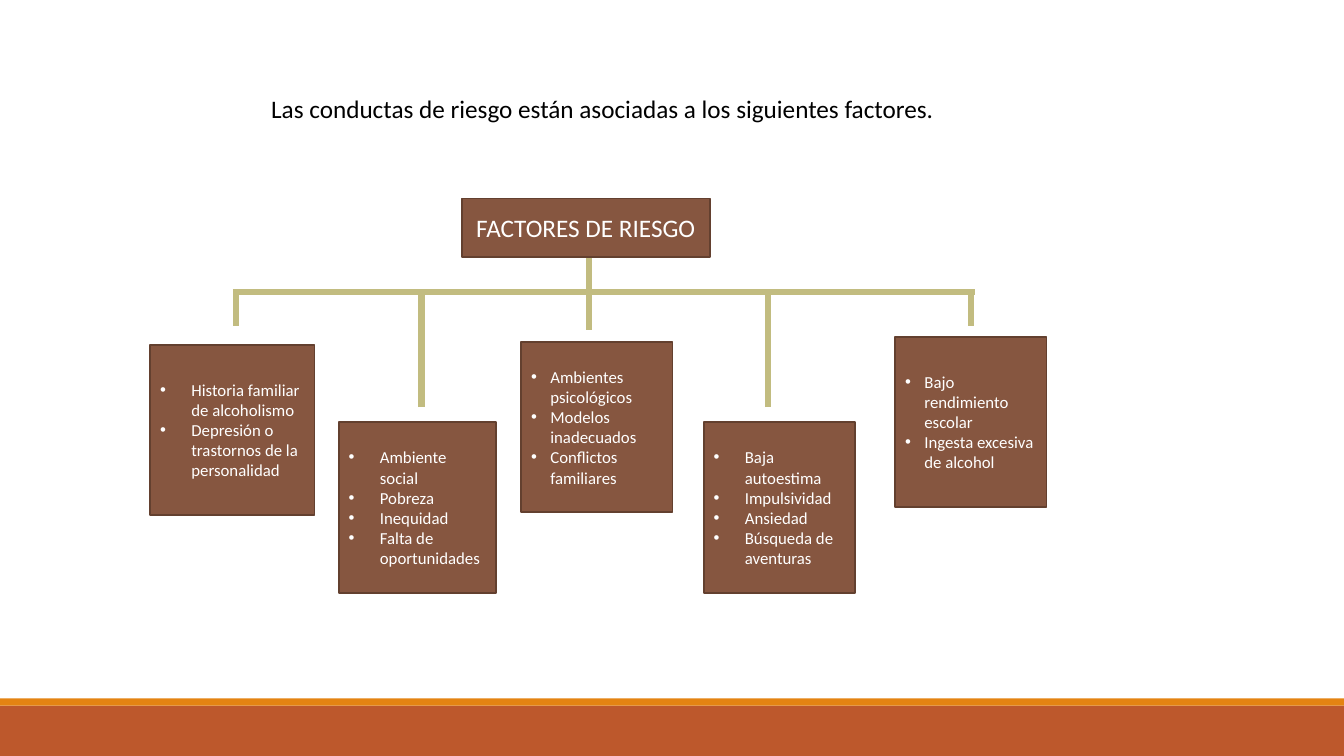
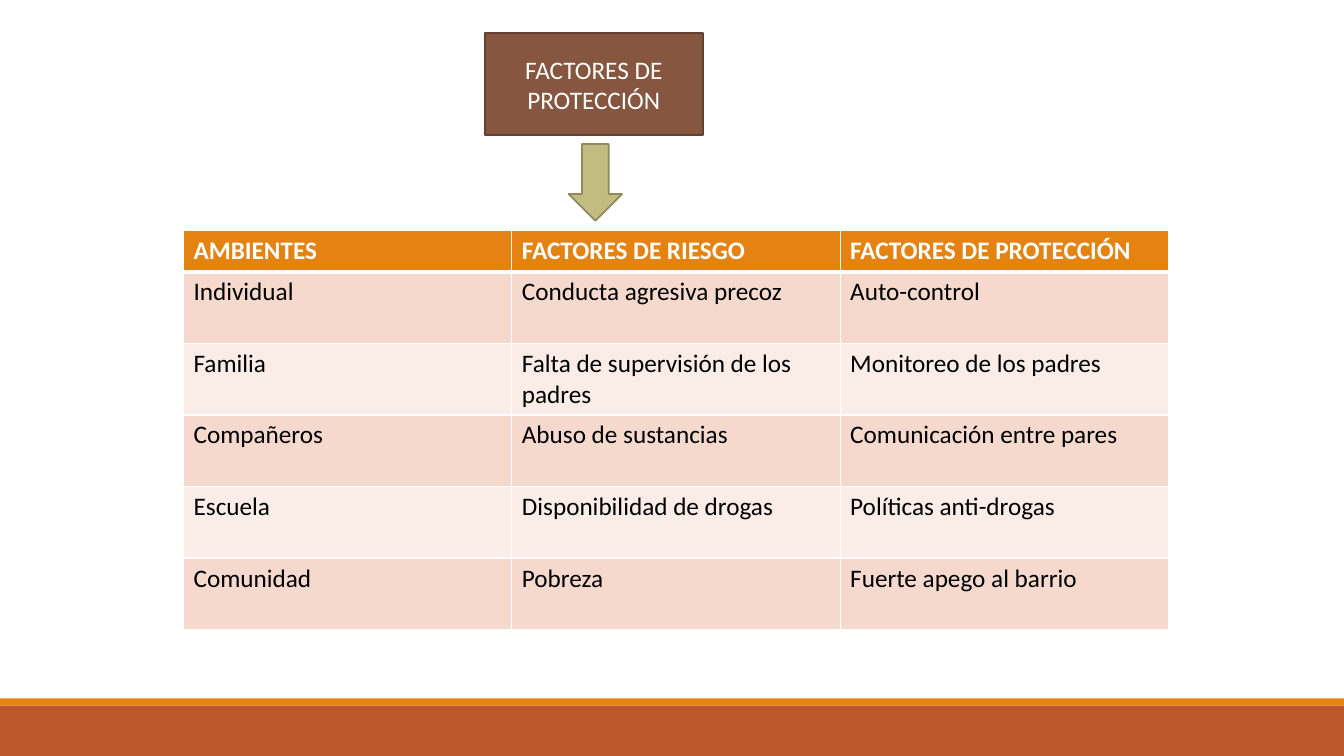
from collections import namedtuple
from dataclasses import dataclass

from lxml import etree
from pptx import Presentation, util as u
from pptx.dml.color import RGBColor
from pptx.enum import shapes, text
from pptx.oxml import ns

PX = 9144
Box = namedtuple("Box", "x y w h")


@dataclass(frozen=True)
class Theme:
    """Colours, type and line widths of the deck."""
    font: str = "Calibri"
    body: int = 18
    small: int = 12
    edge: float = 1.25
    bar: float = 4.5
    black: str = "000000"
    white: str = "FFFFFF"
    rust: str = "BD582C"
    amber: str = "E48312"
    brown: str = "865640"
    dark: str = "63402F"
    olive: str = "C2BC80"
    moss: str = "908B5F"
    rose: str = "F5D9CC"
    pale: str = "FAEDE7"


T = Theme()
PAGE = Box(0, 0, 1333, 750)
CARD_H = 169
CARDS = [
    (0, 145, 163, 31, ["Historia familiar de alcoholismo",
                       "Depresión o trastornos de la personalidad"]),
    (187, 222, 156, 31, ["Ambiente social", "Pobreza", "Inequidad",
                         "Falta de oportunidades"]),
    (368, 142, 150, 19, ["Ambientes psicológicos", "Modelos inadecuados",
                         "Conflictos familiares"]),
    (549, 222, 150, 31, ["Baja autoestima", "Impulsividad", "Ansiedad",
                         "Búsqueda de aventuras"]),
    (739, 137, 150, 19, ["Bajo rendimiento escolar",
                         "Ingesta excesiva de alcohol"]),
]
DROPS = [(85, 126), (269, 207), (435, 130), (613, 207), (814, 126)]
ROWS = [
    ("AMBIENTES", "FACTORES DE RIESGO", "FACTORES DE PROTECCIÓN"),
    ("Individual", "Conducta agresiva precoz", "Auto-control"),
    ("Familia", "Falta de supervisión de los padres", "Monitoreo de los padres"),
    ("Compañeros", "Abuso de sustancias", "Comunicación entre pares"),
    ("Escuela", "Disponibilidad de drogas", "Políticas anti-drogas"),
    ("Comunidad", "Pobreza", "Fuerte apego al barrio"),
]


def rgb(hue):
    """Turn a hex string into a colour."""
    return RGBColor.from_string(hue)


def emu(box):
    """Scale a box from px to EMU."""
    return [n * PX for n in box]


def within(box, x, y, w, h):
    """Place a box relative to the corner of another."""
    return Box(box.x + x, box.y + y, w, h)


def style(para, size, hue, bold=False):
    """Set the font of a paragraph."""
    font = para.font
    font.name, font.size, font.bold = T.font, u.Pt(size), bold
    font.color.rgb = rgb(hue)


def shape(slide, box, fill, line=None, kind=shapes.MSO_SHAPE.RECTANGLE):
    """Draw a flat preset shape."""
    item = slide.shapes.add_shape(kind, *emu(box))
    item.shadow.inherit = False
    item.fill.solid()
    item.fill.fore_color.rgb = rgb(fill)
    if line:
        item.line.color.rgb = rgb(line)
        item.line.width = u.Pt(T.edge)
    else:
        item.line.fill.background()
    return item


def bullet(para, indent):
    """Give a paragraph a hanging bullet."""
    props = para._p.get_or_add_pPr()
    props.set("marL", str(indent * PX))
    props.set("indent", str(-indent * PX))
    etree.SubElement(props, ns.qn("a:buFont"), typeface="Arial")
    etree.SubElement(props, ns.qn("a:buChar"), char="•")


def card(slide, box, lines, size, indent=0):
    """Draw a brown box with centred or bulleted text."""
    frame = shape(slide, box, T.brown, T.dark).text_frame
    frame.word_wrap = True
    frame.vertical_anchor = text.MSO_ANCHOR.MIDDLE
    frame.text = "\n".join(lines)
    for para in frame.paragraphs:
        style(para, size, T.white)
        para.alignment = text.PP_ALIGN.LEFT if indent else text.PP_ALIGN.CENTER
        if indent:
            bullet(para, indent)


def bar(slide, box, x1, y1, x2, y2):
    """Draw one thick line of the tree."""
    ends = box.x + x1, box.y + y1, box.x + x2, box.y + y2
    line = slide.shapes.add_connector(shapes.MSO_CONNECTOR.STRAIGHT, *emu(ends))
    line.line.color.rgb = rgb(T.olive)
    line.line.width = u.Pt(T.bar)
    etree.SubElement(line._element.spPr, ns.qn("a:effectLst"))


def base(deck):
    """Add a blank slide with the footer bands."""
    slide = deck.slides.add_slide(deck.slide_layouts[6])
    shape(slide, within(PAGE, 0, 700, PAGE.w, 50), T.rust)
    shape(slide, within(PAGE, 0, 693, PAGE.w, 7), T.amber)
    return slide


def intro(slide, box, words):
    """Write the centred opening line."""
    frame = slide.shapes.add_textbox(*emu(box)).text_frame
    frame.word_wrap = True
    frame.text = words
    para = frame.paragraphs[0]
    para.alignment = text.PP_ALIGN.CENTER
    style(para, T.body, T.black)


def tree(slide, box):
    """Draw the root, its branches and the cards."""
    bus, stem = 93, 435
    card(slide, within(box, 309, 0, 246, 58), ["FACTORES DE RIESGO"], T.body)
    bar(slide, box, 82, bus, 818, bus)
    bar(slide, box, stem, bus, stem, 59)
    for x, end in DROPS:
        bar(slide, box, x, end, x, bus)
    for x, y, w, indent, lines in CARDS:
        card(slide, within(box, x, y, w, CARD_H), lines, T.small, indent)


def border(cell, head):
    """Rule a cell in white, thicker under the header."""
    props = cell._tc.get_or_add_tcPr()
    for side in ("L", "R", "T", "B"):
        thick = 3 if head and side == "B" else 1
        line = etree.SubElement(props, ns.qn("a:ln" + side), w=str(u.Pt(thick)))
        fill = etree.SubElement(line, ns.qn("a:solidFill"))
        etree.SubElement(fill, ns.qn("a:srgbClr"), val=T.white)


def grid(slide, box, rows):
    """Draw the table of settings and factors."""
    cols = len(rows[0])
    table = slide.shapes.add_table(len(rows), cols, *emu(box)).table
    for col in table.columns:
        col.width = box.w * PX // cols
    top = 40
    for r, row in enumerate(rows):
        head = r == 0
        height = top * PX if head else (box.h - top) * PX // (len(rows) - 1)
        table.rows[r].height = height
        hue = T.amber if head else (T.pale, T.rose)[r % 2]
        for c, words in enumerate(row):
            cell = table.cell(r, c)
            border(cell, head)
            cell.fill.solid()
            cell.fill.fore_color.rgb = rgb(hue)
            cell.text = words
            style(cell.text_frame.paragraphs[0], T.body,
                  T.white if head else T.black, head)


def risks(deck):
    """Build the slide of risk factors."""
    slide = base(deck)
    intro(slide, Box(144, 88, 907, 40),
          "Las conductas de riesgo están asociadas a los siguientes factores.")
    tree(slide, Box(149, 197, 889, 391))


def guards(deck):
    """Build the slide of protective factors."""
    slide = base(deck)
    card(slide, Box(481, 33, 216, 101), ["FACTORES DE PROTECCIÓN"], T.body)
    shape(slide, Box(564, 143, 53, 76), T.olive, T.moss,
          shapes.MSO_SHAPE.DOWN_ARROW)
    grid(slide, Box(182, 229, 977, 395), ROWS)


def main():
    """Build and save the deck."""
    deck = Presentation()
    deck.slide_width, deck.slide_height = PAGE.w * PX, PAGE.h * PX
    risks(deck)
    guards(deck)
    deck.save("out.pptx")


if __name__ == "__main__":
    main()
